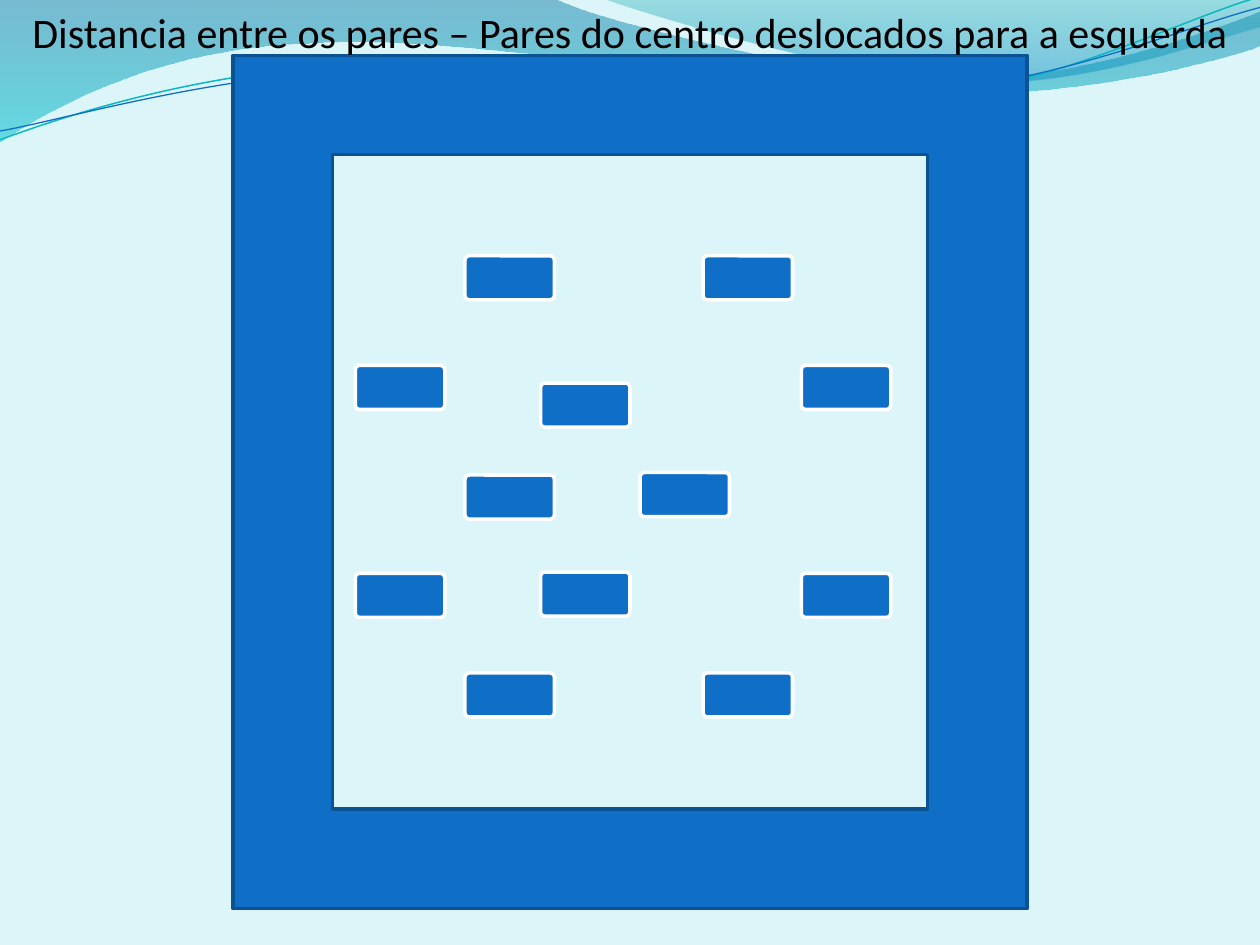
import math

import pptx
import pptx.dml.color
import pptx.enum.shapes
import pptx.enum.text
import pptx.oxml
import pptx.oxml.ns
import pptx.util
from pptx.util import Inches

COLORS = {
    "background": "DBF5F9",
    "blue": "0F6FC6",
    "frame_line": "0B5292",
    "white": "FFFFFF",
    "black": "000000",
    "teal_line": "0AB8BF",
    "left_top": "0074A1",
    "left_bottom": "00C6CF",
    "right_top": "00A1A9",
    "right_bottom": "008BBF",
}
CURVE_ROTATION = 357.3
PAIR_WIDTH, PAIR_HEIGHT = 0.71, 0.35

# An outline is a list of segments, each a list of points:
# one point is a corner, three points are a Bézier curve.
LEFT_WAVE = [
    [(0, 0)], [(4.4, -0.01)],
    [(4.76, 0.17), (6.64, 0.63), (7.58, 0.63)],
    [(8.53, 0.63), (9.58, 0.26), (10, 0.09)],
    [(10.01, 0.36)],
    [(9.83, 0.44), (8.7, 0.76), (7.46, 0.75)],
    [(6.22, 0.75), (3.82, 0.28), (2.57, 0.34)],
    [(1.29, 0.36), (0.46, 0.83), (-0.01, 1.13)],
]
RIGHT_WAVE = [
    [(4.79, -0.01)],
    [(5.09, 0.11), (6.82, 0.62), (7.69, 0.65)],
    [(8.56, 0.69), (9.61, 0.32), (10, 0.21)],
    [(10, 0)],
]
TEAL_CURVE = [
    [(0, 1.11)],
    [(0.48, 0.93), (1.58, 0.57), (2.77, 0.52)],
    [(3.95, 0.47), (5.93, 0.89), (7.13, 0.8)],
    [(8.33, 0.71), (9.38, 0.15), (9.98, -0.02)],
]
BLUE_CURVE = [
    [(0, 1.04)],
    [(0.47, 0.96), (1.64, 0.61), (2.83, 0.56)],
    [(4.03, 0.51), (5.97, 0.84), (7.17, 0.75)],
    [(8.36, 0.67), (9.41, 0.21), (10, 0.06)],
]
PAIR_POSITIONS = [
    (3.69, 2.03), (5.58, 2.03), (2.82, 2.9), (4.29, 3.04),
    (4.29, 4.54), (6.36, 2.9), (5.08, 3.75), (6.36, 4.55),
    (5.58, 5.34), (2.82, 4.55), (3.69, 3.77), (3.69, 5.34),
]


def rgb(name):
    return pptx.dml.color.RGBColor.from_string(COLORS[name])


def add_freeform(shapes, segments, closed):
    points = [(Inches(x), Inches(y)) for segment in segments for x, y in segment]
    builder = shapes.build_freeform(*points[0])
    builder.add_line_segments(points[1:], close=closed)
    shape = builder.convert_to_shape()
    shape.shadow.inherit = False
    lines = iter(list(shape.element.spPr.iter(pptx.oxml.ns.qn("a:lnTo"))))
    for segment in segments[1:]:
        parts = [next(lines) for _ in segment]
        if len(parts) == 3:
            bend_lines(parts)
    return shape


def bend_lines(lines):
    """Turn three line elements into one cubic Bézier element."""
    curve = pptx.oxml.parse_xml(f'<a:cubicBezTo {pptx.oxml.ns.nsdecls("a")}/>')
    lines[0].addprevious(curve)
    for line in lines:
        curve.append(line[0])
        line.getparent().remove(line)


def add_wave(shapes, segments, stops):
    """Add a closed wave; each stop is (position, colour name, opacity percent)."""
    shape = add_freeform(shapes, segments, True)
    shape.line.fill.background()
    shape.fill.gradient()
    shape.fill.gradient_angle = 270
    for gradient_stop, (position, color, _) in zip(shape.fill.gradient_stops, stops):
        gradient_stop.position = position
        gradient_stop.color.rgb = rgb(color)
    color_elements = list(shape.element.spPr.iter(pptx.oxml.ns.qn("a:srgbClr")))
    for element, (_, _, opacity) in zip(color_elements, stops):
        element.append(pptx.oxml.parse_xml(
            f'<a:alpha {pptx.oxml.ns.nsdecls("a")} val="{opacity * 1000}"/>'))


def turn(segments, center, degrees):
    """Rotate an outline clockwise about a center."""
    cosine, sine = math.cos(math.radians(degrees)), math.sin(math.radians(degrees))
    center_x, center_y = center
    return [
        [(center_x + (x - center_x) * cosine - (y - center_y) * sine,
          center_y + (x - center_x) * sine + (y - center_y) * cosine)
         for x, y in segment]
        for segment in segments
    ]


def add_curve(shapes, segments, center, color, width):
    shape = add_freeform(shapes, turn(segments, center, -CURVE_ROTATION), False)
    shape.rotation = CURVE_ROTATION
    shape.fill.background()
    shape.line.color.rgb = rgb(color)
    shape.line.width = pptx.util.Pt(width)


def add_blue_shape(shapes, kind, left, top, width, height, line_color, adjustment):
    shape = shapes.add_shape(
        kind, Inches(left), Inches(top), Inches(width), Inches(height))
    shape.adjustments[0] = adjustment
    shape.shadow.inherit = False
    shape.fill.solid()
    shape.fill.fore_color.rgb = rgb("blue")
    shape.line.color.rgb = rgb(line_color)
    shape.line.width = pptx.util.Pt(2)


def add_title(shapes, text):
    box = shapes.add_textbox(0, 0, Inches(10), Inches(0.52))
    box.text_frame.word_wrap = True
    box.text_frame.text = text
    paragraph = box.text_frame.paragraphs[0]
    paragraph.alignment = pptx.enum.text.PP_ALIGN.CENTER
    font = paragraph.runs[0].font
    font.name = "Calibri"
    font.size = pptx.util.Pt(24)
    font.color.rgb = rgb("black")


def main():
    presentation = pptx.Presentation()
    presentation.slide_width = Inches(10)
    presentation.slide_height = Inches(7.5)
    slide = presentation.slides.add_slide(presentation.slide_layouts[6])
    slide.background.fill.solid()
    slide.background.fill.fore_color.rgb = rgb("background")
    shapes = slide.shapes

    add_wave(shapes, LEFT_WAVE, [(0, "left_top", 45), (1, "left_bottom", 55)])
    add_wave(shapes, RIGHT_WAVE, [(0, "right_top", 30), (0.8, "right_bottom", 45)])
    curves = shapes.add_group_shape().shapes
    add_curve(curves, TEAL_CURVE, (4.99, 0.58), "teal_line", 0.85)
    add_curve(curves, BLUE_CURVE, (5, 0.59), "blue", 0.75)

    kinds = pptx.enum.shapes.MSO_SHAPE
    add_blue_shape(shapes, kinds.FRAME, 1.85, 0.44, 6.3, 6.77, "frame_line", 0.125)
    pairs = shapes.add_group_shape().shapes
    for left, top in PAIR_POSITIONS:
        add_blue_shape(pairs, kinds.ROUNDED_RECTANGLE, left, top,
                       PAIR_WIDTH, PAIR_HEIGHT, "white", 0.1)

    add_title(shapes, "Distancia entre os pares – Pares do centro deslocados para a esquerda")
    presentation.save("out.pptx")


if __name__ == "__main__":
    main()
